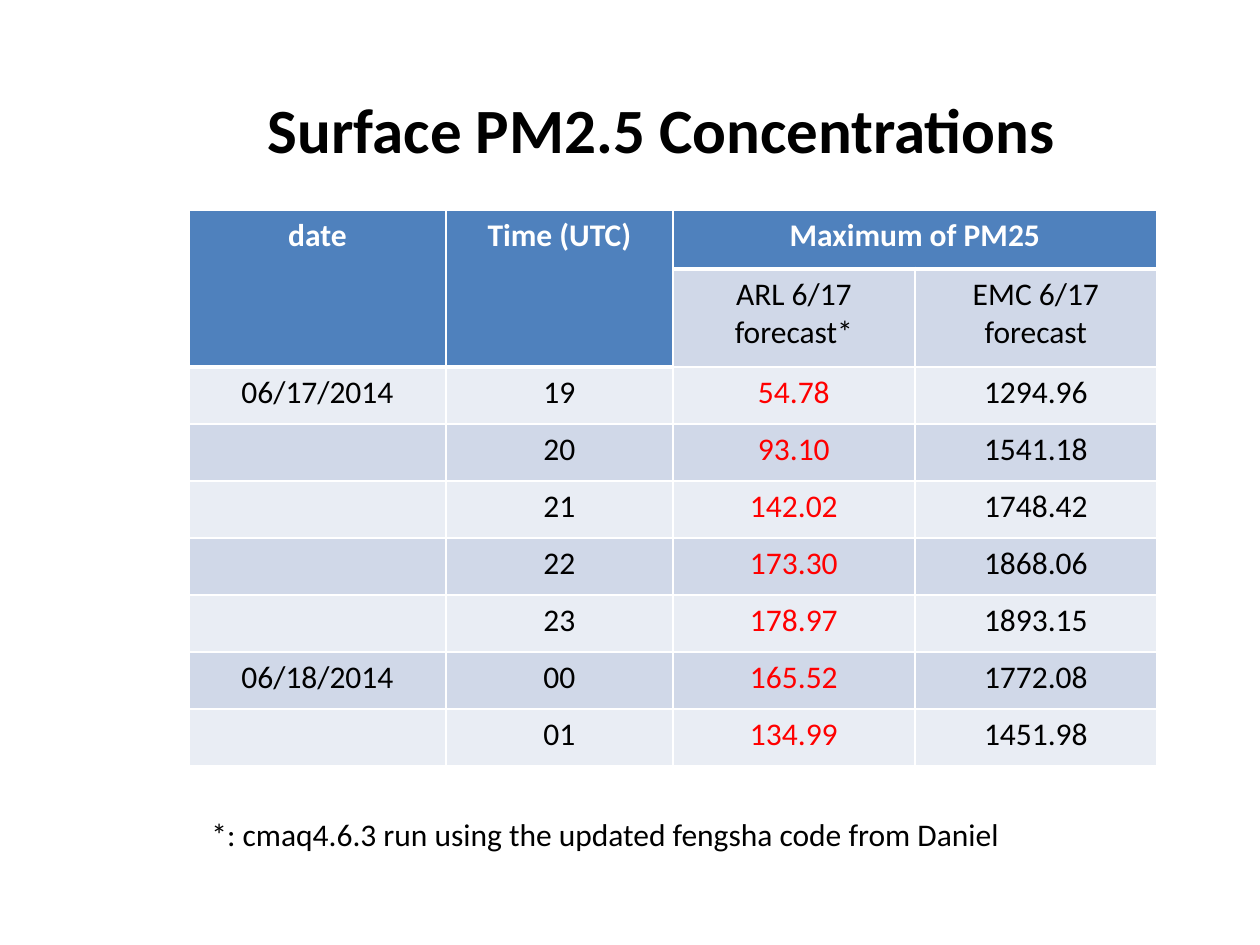
from dataclasses import dataclass

from lxml.etree import SubElement
from pptx import Presentation
from pptx.dml.color import RGBColor
from pptx.enum.text import MSO_AUTO_SIZE, PP_ALIGN
from pptx.oxml.ns import qn
from pptx.util import Emu, Pt

TITLE = "Surface PM2.5 Concentrations"
FOOTNOTE = "*: cmaq4.6.3 run using the updated fengsha code from Daniel"
ROWS = [
    ("date", "Time (UTC)", "Maximum of PM25", ""),
    ("", "", "ARL 6/17 forecast*", "EMC 6/17\nforecast"),
    ("06/17/2014", "19", "54.78", "1294.96"),
    ("", "20", "93.10", "1541.18"),
    ("", "21", "142.02", "1748.42"),
    ("", "22", "173.30", "1868.06"),
    ("", "23", "178.97", "1893.15"),
    ("06/18/2014", "00", "165.52", "1772.08"),
    ("", "01", "134.99", "1451.98"),
]
MERGES = [((0, 0), (1, 0)), ((0, 1), (1, 1)), ((0, 2), (0, 3))]
HEADER_DEPTHS = (2, 2, 1, 1)  # header rows at the top of each column
FIRST_DATA_ROW = 2
ARL_COLUMN = 2

# Lengths in px
PX = 914400 // 126
SLIDE_SIZE = (1260, 945)
TITLE_BOX = (189, 84, 945, 89)
FOOTNOTE_BOX = (199, 809, 816, 50)
TABLE_LEFT, TABLE_TOP = 189, 210
COLUMN_WIDTHS = (257, 227, 242, 242)
ROW_HEIGHTS = (59, 98) + (57,) * 7


@dataclass(frozen=True)
class Theme:
    font: str = "Calibri"
    title_size: int = 36
    body_size: int = 18
    thin: int = 1
    thick: int = 3
    header: str = "4F81BD"
    bands: tuple = ("E9EDF4", "D0D8E8")
    white: str = "FFFFFF"
    black: str = "000000"
    red: str = "FF0000"


THEME = Theme()


def px(length):
    return Emu(length * PX)


def style_text(frame, size, color, bold=False, align=PP_ALIGN.CENTER):
    for paragraph in frame.paragraphs:
        paragraph.alignment = align
        font = paragraph.font
        font.name, font.size, font.bold = THEME.font, Pt(size), bold
        font.color.rgb = RGBColor.from_string(color)


def add_text(slide, box, text, size, wrap, **style):
    frame = slide.shapes.add_textbox(*map(px, box)).text_frame
    frame.word_wrap = wrap
    frame.auto_size = MSO_AUTO_SIZE.SHAPE_TO_FIT_TEXT
    frame.text = text
    style_text(frame, size, THEME.black, **style)


def set_borders(cell, top, bottom):
    """Draw white cell borders; must run before the fill is set."""
    properties = cell._tc.get_or_add_tcPr()
    widths = {"a:lnL": THEME.thin, "a:lnR": THEME.thin, "a:lnT": top, "a:lnB": bottom}
    for tag, width in widths.items():
        line = SubElement(properties, qn(tag), w=str(Pt(width)))
        fill = SubElement(line, qn("a:solidFill"))
        SubElement(fill, qn("a:srgbClr"), val=THEME.white)


def fill_cell(cell, row, column, text):
    depth = HEADER_DEPTHS[column]
    is_header = row < depth
    set_borders(
        cell,
        top=THEME.thick if row == depth else THEME.thin,
        bottom=THEME.thick if row == depth - 1 else THEME.thin,
    )
    cell.fill.solid()
    background = THEME.header if is_header else THEME.bands[row % 2]
    cell.fill.fore_color.rgb = RGBColor.from_string(background)
    cell.text = text
    if is_header:
        color = THEME.white
    elif column == ARL_COLUMN and row >= FIRST_DATA_ROW:
        color = THEME.red
    else:
        color = THEME.black
    style_text(cell.text_frame, THEME.body_size, color, bold=is_header)


def add_concentration_table(slide):
    size = (sum(COLUMN_WIDTHS), sum(ROW_HEIGHTS))
    table = slide.shapes.add_table(
        len(ROWS), len(COLUMN_WIDTHS), *map(px, (TABLE_LEFT, TABLE_TOP, *size))
    ).table
    table.horz_banding = False
    for column, width in zip(table.columns, COLUMN_WIDTHS):
        column.width = px(width)
    for row, height in zip(table.rows, ROW_HEIGHTS):
        row.height = px(height)
    for row, texts in enumerate(ROWS):
        for column, text in enumerate(texts):
            fill_cell(table.cell(row, column), row, column, text)
    for first, last in MERGES:
        table.cell(*first).merge(table.cell(*last))


def main():
    deck = Presentation()
    deck.slide_width, deck.slide_height = map(px, SLIDE_SIZE)
    slide = deck.slides.add_slide(deck.slide_layouts[6])
    add_concentration_table(slide)
    add_text(slide, FOOTNOTE_BOX, FOOTNOTE, THEME.body_size, wrap=False, align=PP_ALIGN.LEFT)
    add_text(slide, TITLE_BOX, TITLE, THEME.title_size, wrap=True, bold=True)
    deck.save("out.pptx")


if __name__ == "__main__":
    main()
